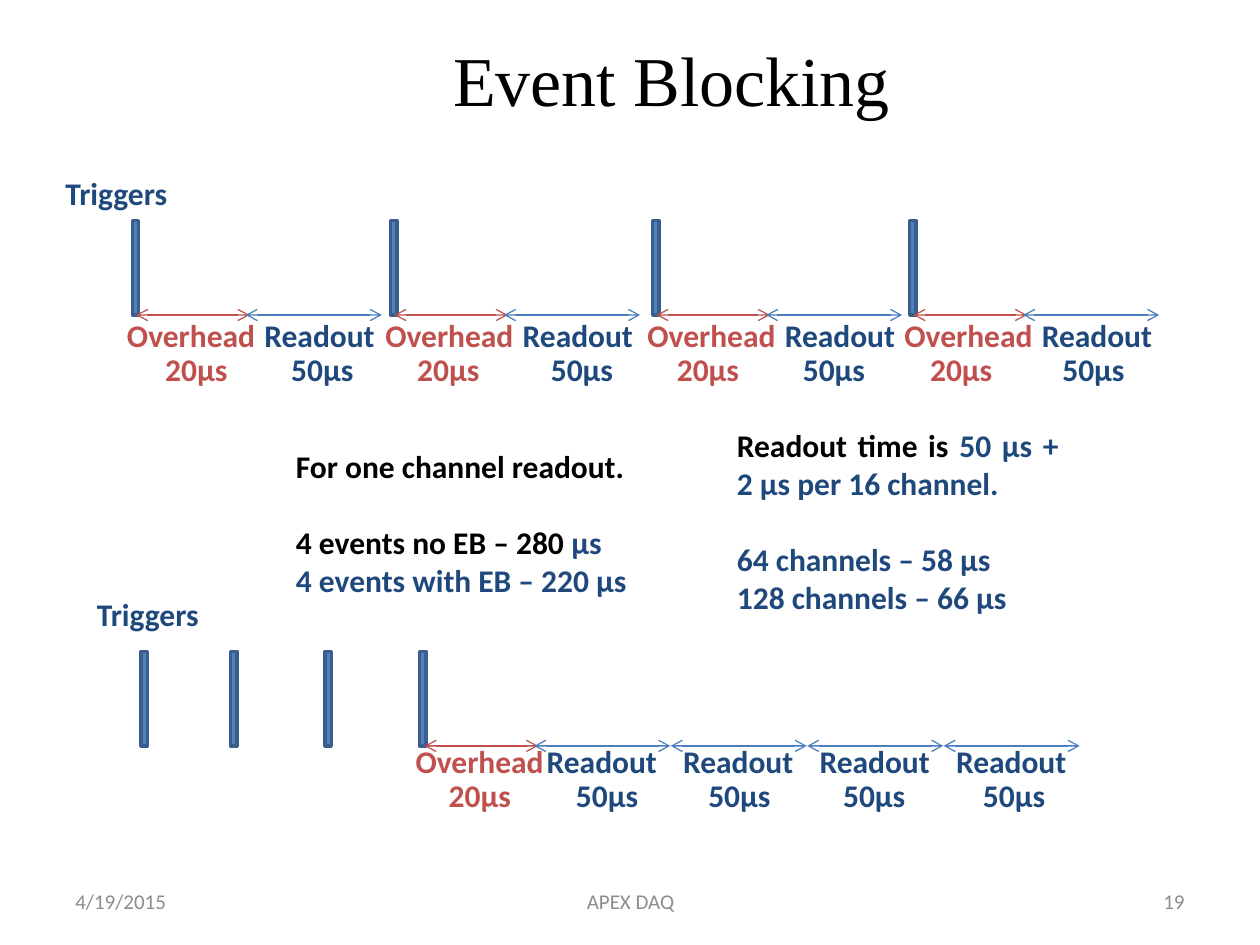
from dataclasses import dataclass

from lxml import etree
from pptx import Presentation
from pptx import util as u
from pptx.dml.color import RGBColor
from pptx.enum import shapes, text
from pptx.oxml.ns import qn


@dataclass(frozen=True)
class Theme:
    ink: str = "000000"
    navy: str = "1F497D"
    red: str = "C0504D"
    arrow_blue: str = "4B7EBC"
    bar_fill: str = "4F81BD"
    bar_edge: str = "3A5F8C"
    grey: str = "8C8C8C"
    title_font: str = "Times New Roman"
    body_font: str = "Calibri"
    title_size: int = 40
    body_size: int = 18
    footer_size: int = 12


theme = Theme()
LEFT, CENTER, RIGHT, JUSTIFY = (text.PP_ALIGN.LEFT, text.PP_ALIGN.CENTER,
                                text.PP_ALIGN.RIGHT, text.PP_ALIGN.JUSTIFY)

deck = Presentation()
deck.slide_width, deck.slide_height = u.Inches(10), u.Inches(7.5)
COL = deck.slide_width / 10   # grid of 10 columns
ROW = deck.slide_height / 7.5  # and 7.5 rows
slide = deck.slides.add_slide(deck.slide_layouts[5])


def write(at, paragraphs, size=theme.body_size, bold=True, align=LEFT,
          wrap=True, anchor=text.MSO_ANCHOR.TOP):
    """Add a text box; each paragraph is (space before, [(words, colour), ...])."""
    left, top, width, height = at
    box = slide.shapes.add_textbox(int(left * COL), int(top * ROW),
                                   int(width * COL), int(height * ROW))
    frame = box.text_frame
    frame.word_wrap = wrap
    frame.vertical_anchor = anchor
    for i, (gap, runs) in enumerate(paragraphs):
        para = frame.add_paragraph() if i else frame.paragraphs[0]
        para.alignment = align
        para.space_before = u.Pt(gap)
        for words, colour in runs:
            run = para.add_run()
            run.text = words
            run.font.name, run.font.size = theme.body_font, u.Pt(size)
            run.font.bold = bold
            run.font.color.rgb = RGBColor.from_string(colour)
    return frame


def span(start, length, y, colour):
    """Add a horizontal line with an open arrowhead at both ends."""
    line = slide.shapes.add_connector(
        shapes.MSO_CONNECTOR.STRAIGHT, int(start * COL), int(y * ROW),
        int((start + length) * COL), int(y * ROW))
    line.line.width = u.Pt(0.75)
    line.line.color.rgb = RGBColor.from_string(colour)
    properties = line.line._get_or_add_ln()
    for end in ("a:headEnd", "a:tailEnd"):
        etree.SubElement(properties, qn(end), type="arrow")
    etree.SubElement(line._element.spPr, qn("a:effectLst"))


# Title
title = slide.shapes.title
title.left, title.top = int(0.83 * COL), 0
title.width, title.height = int(9 * COL), int(1.25 * ROW)
title.text_frame.vertical_anchor = text.MSO_ANCHOR.MIDDLE
heading = title.text_frame.paragraphs[0]
heading.alignment = CENTER
heading_run = heading.add_run()
heading_run.text = "Event Blocking"
heading_run.font.name, heading_run.font.size = theme.title_font, u.Pt(theme.title_size)
heading_run.font.color.rgb = RGBColor.from_string(theme.ink)

# Timelines: without blocking each trigger is read out on its own,
# with blocking one overhead is followed by four readouts
unblocked_triggers = [1.05, 3.10, 5.18, 7.22]
blocked_triggers = [1.12, 1.83, 2.58, 3.33]
OVERHEAD, READOUT = 0.9, 1.08
timelines = [
    dict(base=2.5, triggers=unblocked_triggers, caption=0.42, caption_rise=1.17,
         overheads=[x + 0.03 for x in unblocked_triggers],
         readouts=[x + 0.9 for x in unblocked_triggers],
         label_rise=0.04, label_shift=0.05, durations_drop=0.23,
         centers=[1.56, 2.56, 3.56, 4.62, 5.62, 6.62, 7.63, 8.68],
         colours=[theme.red, theme.navy] * 4),
    dict(base=5.92, triggers=blocked_triggers, caption=0.67, caption_rise=1.25,
         overheads=[3.37], readouts=[4.24 + 1.083 * i for i in range(4)],
         label_rise=0.08, label_shift=0, durations_drop=0.19,
         centers=[3.81, 4.82, 5.87, 6.94, 8.05],
         colours=[theme.red] + [theme.navy] * 4),
]
for row in timelines:
    base = row["base"]
    label_top = base - row["label_rise"]

    # Trigger bars and caption
    for x in row["triggers"]:
        bar = slide.shapes.add_shape(
            shapes.MSO_SHAPE.RECTANGLE, int(x * COL), int((base - 0.75) * ROW),
            int(0.05 * COL), int(0.75 * ROW))
        bar.shadow.inherit = False
        bar.fill.solid()
        bar.fill.fore_color.rgb = RGBColor.from_string(theme.bar_fill)
        bar.line.color.rgb = RGBColor.from_string(theme.bar_edge)
        bar.line.width = u.Pt(2)
    write((row["caption"], base - row["caption_rise"], 1.01, 0.4),
          [(0, [("Triggers", theme.navy)])], wrap=False)

    # Overhead and readout spans
    for x in row["overheads"]:
        span(x, OVERHEAD, base, theme.red)
        write((x - 0.17, label_top, 1.23, 0.4),
              [(0, [("Overhead", theme.red)])], wrap=False)
    for x in row["readouts"]:
        span(x, READOUT, base, theme.arrow_blue)
        write((x + row["label_shift"], label_top, READOUT, 0.4),
              [(0, [("Readout", theme.navy)])], wrap=False)

    # Durations, centred on tab stops
    durations_left = row["centers"][0] - 0.41
    durations_width = row["centers"][-1] - durations_left + 0.48
    durations = write(
        (durations_left, base + row["durations_drop"], durations_width, 0.4),
        [(0, [("\t20µs" if colour == theme.red else "\t50µs", colour)
              for colour in row["colours"]])])
    stops = etree.SubElement(durations.paragraphs[0]._p.get_or_add_pPr(), qn("a:tabLst"))
    for center in row["centers"]:
        etree.SubElement(stops, qn("a:tab"), algn="ctr",
                         pos=str(int((center - durations_left - 0.1) * COL)))

# Notes on timing; the second group stands one line below the first
LINE = 22
write((2.25, 3.5, 2.95, 1.31), [
    (0, [("For one channel readout.", theme.ink)]),
    (LINE, [("4 events no EB – 280 ", theme.ink), ("µs", theme.navy)]),
    (0, [("4 events with EB – 220 µs", theme.navy)]),
], align=JUSTIFY)
write((5.75, 3.33, 2.75, 1.62), [
    (0, [("Readout time is ", theme.ink), ("50 µs + 2 µs per 16 channel.", theme.navy)]),
    (LINE, [("64 channels – 58 µs", theme.navy)]),
    (0, [("128 channels – 66 µs", theme.navy)]),
], align=JUSTIFY)

# Footer
for left, width, words, align in [(0.5, 2.33, "4/19/2015", LEFT),
                                  (3.42, 3.17, "APEX DAQ", CENTER),
                                  (7.17, 2.33, "19", RIGHT)]:
    write((left, 6.95, width, 0.4), [(0, [(words, theme.grey)])],
          size=theme.footer_size, bold=False, align=align,
          anchor=text.MSO_ANCHOR.MIDDLE)

deck.save("out.pptx")
